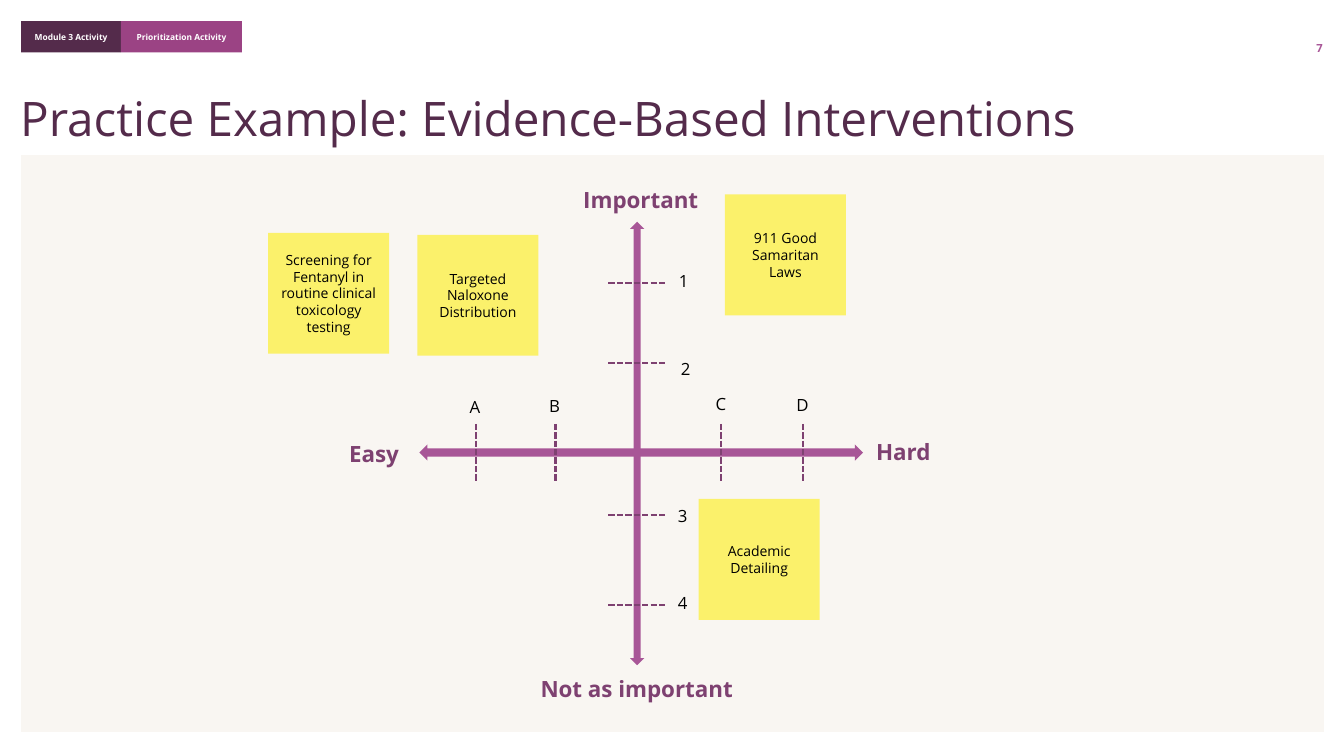
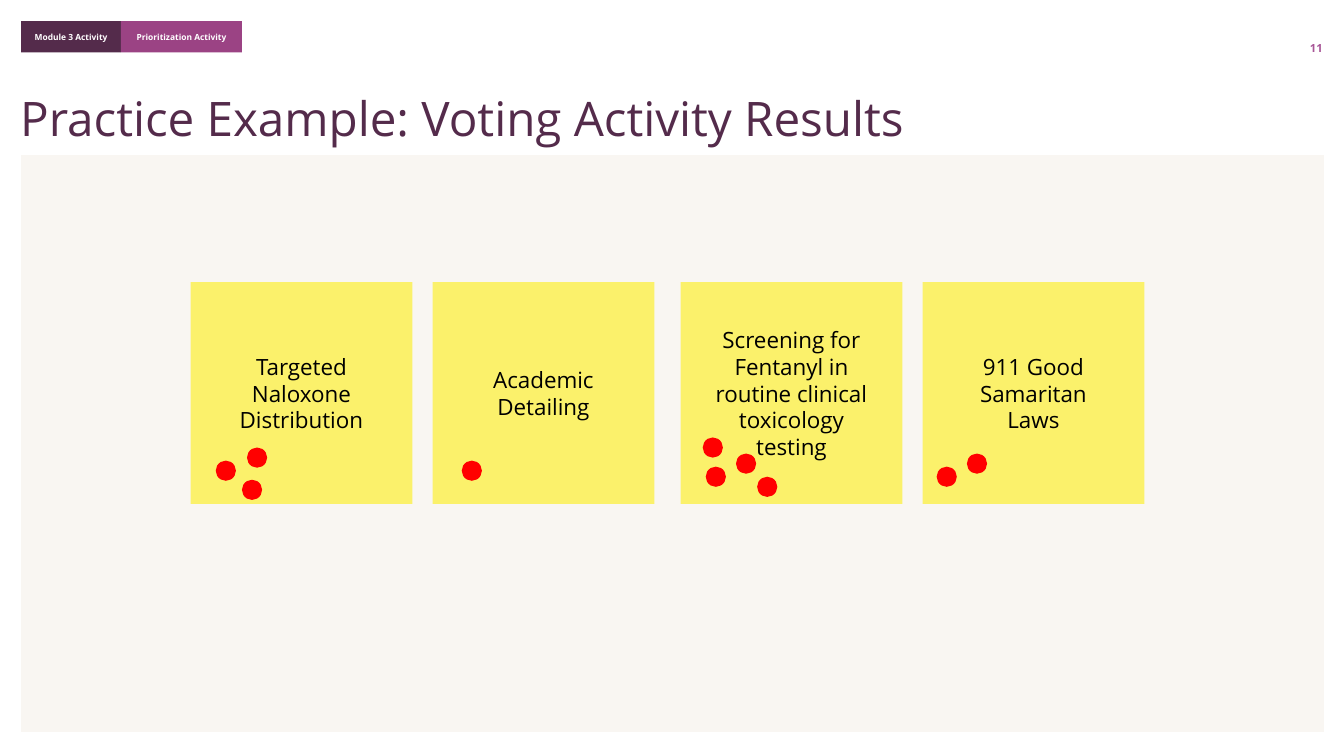
from lxml import etree
from pptx import Presentation
from pptx.dml.color import RGBColor
from pptx.enum.dml import MSO_LINE
from pptx.enum.shapes import MSO_CONNECTOR, MSO_SHAPE
from pptx.enum.text import MSO_ANCHOR, MSO_AUTO_SIZE, PP_ALIGN
from pptx.oxml.ns import qn
from pptx.util import Inches, Pt

FONT = "Open Sans"
COLORS = {
    "plum": "542B4B", "magenta": "9B4384", "orchid": "A85697", "label": "7E4171",
    "panel": "F9F6F2", "note": "FBF16B", "dot": "FF0000",
    "black": "000000", "white": "FFFFFF",
}

# Shared content: text, left, width, fill
TABS = [
    ("Module 3 Activity", 0.21, 0.99, "plum"),
    ("Prioritization Activity", 1.2, 1.2, "magenta"),
]
NALOXONE = "Targeted Naloxone Distribution"
DETAILING = "Academic Detailing"
SAMARITAN = "911 Good Samaritan Laws"
SCREENING = "Screening for Fentanyl in routine clinical toxicology testing"

# Priority matrix: axes, end labels, ticks and notes
CENTER_X, CENTER_Y, AXIS_LEN = 6.32, 4.49, 4.4
AXES = [
    (MSO_SHAPE.UP_DOWN_ARROW, (6.25, 2.2, 0.14, AXIS_LEN)),
    (MSO_SHAPE.LEFT_RIGHT_ARROW, (4.16, 4.41, AXIS_LEN, 0.16)),
]
AXIS_LABELS = [  # text, left, top, width
    ("Easy", 3.28, 4.31, 0.86),
    ("Hard", 8.53, 4.29, 0.86),
    ("Important", 5.62, 1.79, 1.47),
    ("Not as important", 5.09, 6.65, 2.45),
]
TICK_LEN = 0.57
ROW_TICKS = [  # text, tick y, label left, label top
    ("1", 2.81, 6.54, 2.64), ("2", 3.6, 6.56, 3.51),
    ("3", 5.11, 6.53, 4.97), ("4", 6, 6.53, 5.83),
]
COLUMN_TICKS = [  # text, tick x, label left, label top
    ("A", 4.72, 4.47, 3.89), ("B", 5.51, 5.26, 3.88),
    ("C", 7.15, 6.91, 3.86), ("D", 7.96, 7.72, 3.87),
]
MATRIX_NOTES = [
    (NALOXONE, 4.14, 2.33), (DETAILING, 6.93, 4.95),
    (SAMARITAN, 7.19, 1.93), (SCREENING, 2.66, 2.31),
]

# Voting results: note, left, vote dots
NOTE_TOP, DOT_SIZE = 2.8, 0.2
VOTES = [
    (NALOXONE, 1.89, [(2.14, 4.57), (2.45, 4.44), (2.4, 4.76)]),
    (DETAILING, 4.29, [(4.58, 4.57)]),
    (SCREENING, 6.75, [(6.97, 4.34), (7.51, 4.73), (7.3, 4.5), (7, 4.63)]),
    (SAMARITAN, 9.15, [(9.59, 4.5), (9.29, 4.63)]),
]


def rgb(name):
    return RGBColor.from_string(COLORS[name])


def set_text(sp, text, size, color="black", bold=False, align=PP_ALIGN.CENTER,
             anchor=MSO_ANCHOR.MIDDLE, insets=(0.1, 0.05, 0.1, 0.05)):
    tf = sp.text_frame
    tf.word_wrap = True
    tf.auto_size = MSO_AUTO_SIZE.NONE
    tf.vertical_anchor = anchor
    tf.margin_left, tf.margin_top, tf.margin_right, tf.margin_bottom = map(Inches, insets)
    p = tf.paragraphs[0]
    p.alignment = align
    r = p.add_run()
    r.text = text
    r.font.name, r.font.size, r.font.bold = FONT, Pt(size), bold
    r.font.color.rgb = rgb(color)
    return p


def add_box(slide, box, fill, kind=MSO_SHAPE.RECTANGLE):
    sp = slide.shapes.add_shape(kind, *map(Inches, box))
    sp.shadow.inherit = False
    sp.fill.solid()
    sp.fill.fore_color.rgb = rgb(fill)
    sp.line.fill.background()
    return sp


def add_label(slide, text, box, size, **style):
    set_text(slide.shapes.add_textbox(*map(Inches, box)), text, size, **style)


def add_note(slide, text, left, top, side, size, insets):
    set_text(add_box(slide, (left, top, side, side), "note"), text, size, insets=insets)


def add_tick(slide, x1, y1, x2, y2):
    line = slide.shapes.add_connector(MSO_CONNECTOR.STRAIGHT, *map(Inches, (x1, y1, x2, y2)))
    line.line.color.rgb = rgb("label")
    line.line.width = Pt(1.5)
    line.line.dash_style = MSO_LINE.SQUARE_DOT
    etree.SubElement(line._element.spPr, qn("a:effectLst"))


def add_slide(prs, title, number):
    slide = prs.slides.add_slide(prs.slide_layouts[5])
    add_box(slide, (0.21, 1.54, 12.92, 5.72), "panel")
    for text, left, width, fill in TABS:
        tab = add_box(slide, (left, 0.21, width, 0.31), fill)
        set_text(tab, text, 6, "white", True, insets=(0, 0.05, 0, 0.05))
    add_label(slide, number, (12.25, 0.21, 0.87, 0.33), 8, color="orchid", bold=True,
              align=PP_ALIGN.RIGHT, anchor=MSO_ANCHOR.BOTTOM, insets=(0.1, 0, 0, 0))
    sp = slide.shapes.title
    sp.left, sp.top, sp.width, sp.height = map(Inches, (0.2, 0.92, 12.05, 0.57))
    p = set_text(sp, title, 34, "plum", align=PP_ALIGN.LEFT, insets=(0, 0.05, 0.1, 0.05))
    p.line_spacing = 0.9
    return slide


def build_matrix(prs):
    slide = add_slide(prs, "Practice Example: Evidence-Based Interventions", "7")
    for kind, box in AXES:
        add_box(slide, box, "orchid", kind)
    for text, left, top, width in AXIS_LABELS:
        add_label(slide, text, (left, top, width, 0.37), 16, color="label", bold=True)
    # Ticks centred on each axis
    half = TICK_LEN / 2
    for _, y, _, _ in ROW_TICKS:
        add_tick(slide, CENTER_X - half, y, CENTER_X + half, y)
    for _, x, _, _ in COLUMN_TICKS:
        add_tick(slide, x, CENTER_Y - half, x, CENTER_Y + half)
    for text, _, left, top in ROW_TICKS + COLUMN_TICKS:
        add_label(slide, text, (left, top, 0.48, 0.3), 12)
    for text, left, top in MATRIX_NOTES:
        add_note(slide, text, left, top, 1.2, 10, (0.1, 0, 0.1, 0))


def build_votes(prs):
    slide = add_slide(prs, "Practice Example: Voting Activity Results", "11")
    for text, left, dots in VOTES:
        add_note(slide, text, left, NOTE_TOP, 2.2, 16, (0.3, 0.2, 0.3, 0.2))
        for x, y in dots:
            add_box(slide, (x, y, DOT_SIZE, DOT_SIZE), "dot", MSO_SHAPE.OVAL)


def main():
    prs = Presentation()
    prs.slide_width, prs.slide_height = Inches(13.33), Inches(7.5)
    build_matrix(prs)
    build_votes(prs)
    prs.save("out.pptx")


if __name__ == "__main__":
    main()
